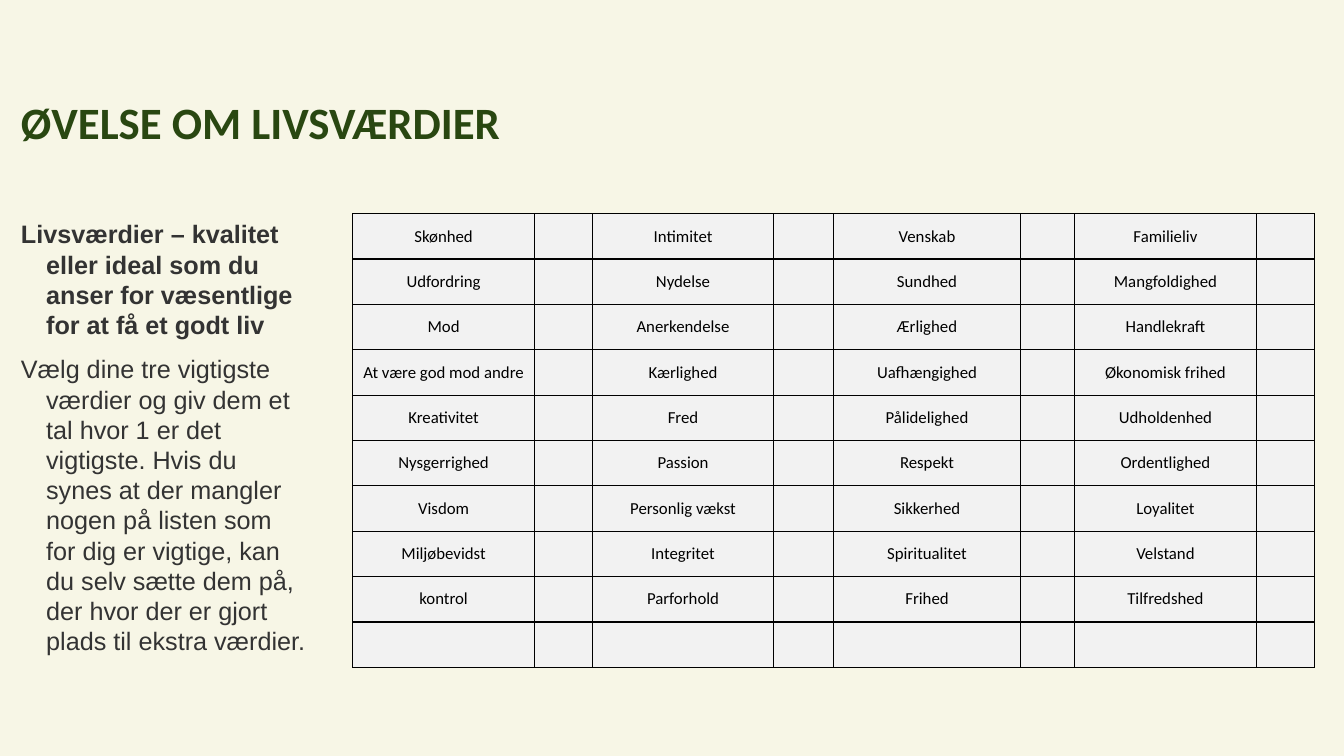
from lxml.etree import SubElement
from pptx import Presentation
from pptx.dml.color import RGBColor
from pptx.enum.text import MSO_ANCHOR as Anchor, PP_ALIGN as Align
from pptx.oxml.ns import qn
from pptx.util import Inches, Pt

CREAM = RGBColor(0xF7, 0xF6, 0xE6)
FOREST = RGBColor(0x29, 0x47, 0x11)
CHARCOAL = RGBColor(0x33, 0x33, 0x33)
PALE_GREY = RGBColor(0xF2, 0xF2, 0xF2)
BLACK = RGBColor(0, 0, 0)

TITLE_FORMAT = {"name": "Calibri", "size": Pt(32), "bold": True}
BODY_FORMAT = {"name": "Arial", "size": Pt(18)}
CELL_FORMAT = {"name": "Calibri", "size": Pt(12), "bold": False}

INSTRUCTIONS = [
    ("Livsværdier – kvalitet eller ideal som du anser for væsentlige for at få et godt liv", True),
    ("Vælg dine tre vigtigste værdier og giv dem et tal hvor 1 er det vigtigste. "
     "Hvis du synes at der mangler nogen på listen som for dig er vigtige, kan du selv "
     "sætte dem på, der hvor der er gjort plads til ekstra værdier.", False),
]
VALUES = [
    ("Skønhed", "Intimitet", "Venskab", "Familieliv"),
    ("Udfordring", "Nydelse", "Sundhed", "Mangfoldighed"),
    ("Mod", "Anerkendelse", "Ærlighed", "Handlekraft"),
    ("At være god mod andre", "Kærlighed", "Uafhængighed", "Økonomisk frihed"),
    ("Kreativitet", "Fred", "Pålidelighed", "Udholdenhed"),
    ("Nysgerrighed", "Passion", "Respekt", "Ordentlighed"),
    ("Visdom", "Personlig vækst", "Sikkerhed", "Loyalitet"),
    ("Miljøbevidst", "Integritet", "Spiritualitet", "Velstand"),
    ("kontrol", "Parforhold", "Frihed", "Tilfredshed"),
    ("", "", "", ""),
]
COLUMN_WIDTHS = [1.8, 0.58, 1.79, 0.6, 1.85, 0.54, 1.8, 0.58]
ROW_HEIGHT = 0.45


class SlideBuilder:
    """Draws styled text and tables on the current slide."""

    def __init__(self, slide):
        self.slide = slide
        self.slide.background.fill.solid()
        self.slide.background.fill.fore_color.rgb = CREAM

    def apply(self, target, values):
        for name, value in values.items():
            setattr(target, name, value)

    def add_text(self, paragraph, text, values, color):
        run = paragraph.add_run()
        run.text = text
        self.apply(run.font, values)
        run.font.color.rgb = color

    def text_frame(self, left, top, width, height):
        box = self.slide.shapes.add_textbox(*map(Inches, (left, top, width, height)))
        self.apply(box.text_frame, {"word_wrap": True, "vertical_anchor": Anchor.TOP})
        return box.text_frame

    def title(self, text, *area):
        paragraph = self.text_frame(*area).paragraphs[0]
        paragraph.line_spacing = 0.9
        self.add_text(paragraph, text, TITLE_FORMAT, FOREST)

    def body(self, entries, *area):
        frame = self.text_frame(*area)
        for index, (text, bold) in enumerate(entries):
            paragraph = frame.add_paragraph() if index else frame.paragraphs[0]
            properties = paragraph._p.get_or_add_pPr()
            properties.set("marL", str(Inches(0.25)))
            properties.set("indent", str(Inches(-0.25)))
            if index:
                paragraph.space_before = Pt(10)
            self.add_text(paragraph, text, {**BODY_FORMAT, "bold": bold}, CHARCOAL)

    def border(self, cell):
        properties = cell._tc.get_or_add_tcPr()
        for side in ("lnL", "lnR", "lnT", "lnB"):
            line = SubElement(properties, qn(f"a:{side}"), w=str(Pt(1)))
            fill = SubElement(line, qn("a:solidFill"))
            SubElement(fill, qn("a:srgbClr"), val=str(BLACK))

    def cell(self, cell, text):
        self.border(cell)
        cell.fill.solid()
        cell.fill.fore_color.rgb = PALE_GREY
        self.apply(cell, {"vertical_anchor": Anchor.MIDDLE, "margin_left": 0,
                          "margin_right": 0, "margin_top": 0, "margin_bottom": 0})
        paragraph = cell.text_frame.paragraphs[0]
        paragraph.alignment = Align.CENTER
        if text:
            self.add_text(paragraph, text, CELL_FORMAT, BLACK)

    def value_table(self, rows, widths, left, top):
        area = (left, top, sum(widths), ROW_HEIGHT * len(rows))
        table = self.slide.shapes.add_table(len(rows), len(widths), *map(Inches, area)).table
        self.apply(table, {"first_row": False, "horz_banding": False})
        for column, width in zip(table.columns, widths):
            column.width = Inches(width)
        for row_index, values in enumerate(rows):
            table.rows[row_index].height = Inches(ROW_HEIGHT)
            for value_index, value in enumerate(values):
                self.cell(table.cell(row_index, 2 * value_index), value)
                self.cell(table.cell(row_index, 2 * value_index + 1), "")


def main():
    presentation = Presentation()
    presentation.slide_width = Inches(13.33)
    presentation.slide_height = Inches(7.5)
    builder = SlideBuilder(presentation.slides.add_slide(presentation.slide_layouts[6]))
    builder.body(INSTRUCTIONS, 0.11, 2.12, 3.04, 4.04)
    builder.title("ØVELSE OM LIVSVÆRDIER", 0.11, 0.95, 6.08, 1.33)
    builder.value_table(VALUES, COLUMN_WIDTHS, 3.5, 2.12)
    presentation.save("out.pptx")


if __name__ == "__main__":
    main()
